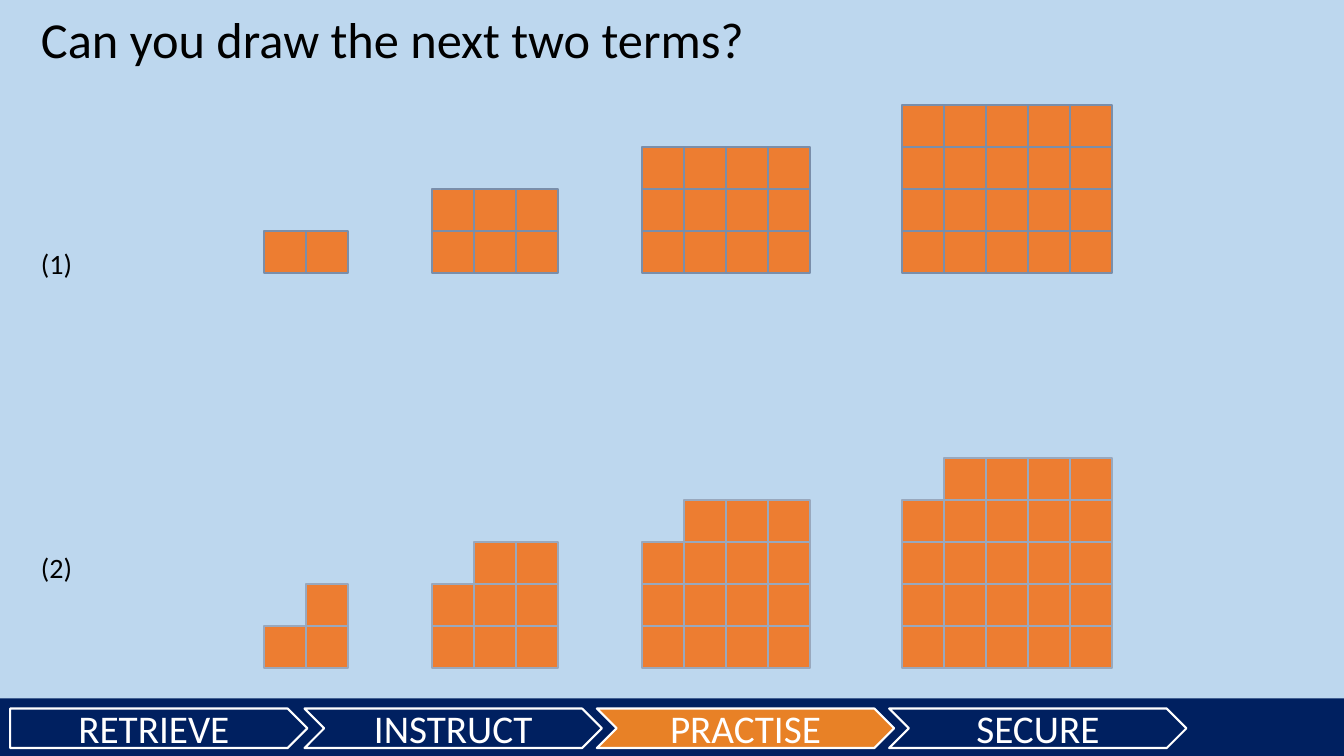
import pptx
import pptx.dml.color
import pptx.enum.shapes
import pptx.enum.text
import pptx.util

COLORS = {
    "background": "BDD7EE",
    "navy": "002060",
    "active": "E88126",
    "tile": "ED7D31",
    "rectangle_edge": "7A8EAA",
    "step_edge": "99A8BD",
    "white": "FFFFFF",
    "black": "000000",
}
FONT = "Calibri"
CELL = pptx.util.Inches(7.5 / 18)  # the slide is 32 columns by 18 rows
COLUMNS, ROWS = 32, 18
TERM_LEFTS = (6.28, 10.28, 15.28, 21.48)
STAGES = (("RETRIEVE", 0.24), ("INSTRUCT", 7.25), ("PRACTISE", 14.21), ("SECURE", 21.17))
CURRENT_STAGE = "PRACTISE"
PRESETS = pptx.enum.shapes.MSO_SHAPE


def rgb(name):
    return pptx.dml.color.RGBColor.from_string(COLORS[name])


def cells(*counts):
    return [round(count * CELL) for count in counts]


def add_run(paragraph, text, size, color):
    run = paragraph.add_run()
    run.text = text
    run.font.name = FONT
    run.font.size = pptx.util.Pt(size)
    run.font.color.rgb = rgb(color)


def add_text(slide, text, box, size):
    frame = slide.shapes.add_textbox(*cells(*box)).text_frame
    frame.word_wrap = True
    paragraph = frame.paragraphs[0]
    add_run(paragraph, text, size, "black")
    return paragraph


def add_block(shapes, preset, box, fill, edge=None):
    shape = shapes.add_shape(preset, *cells(*box))
    shape.shadow.inherit = False
    shape.fill.solid()
    shape.fill.fore_color.rgb = rgb(fill)
    if edge:
        shape.line.color.rgb = rgb(edge)
        shape.line.width = pptx.util.Pt(1.5)
    else:
        shape.line.fill.background()
    return shape


def add_term(slide, left, bottom, heights, edge):
    """Group the tiles of one term, stacked to the given column heights."""
    group = slide.shapes.add_group_shape()
    for column, height in enumerate(heights):
        for level in range(1, height + 1):
            box = (left + column, bottom - level, 1, 1)
            add_block(group.shapes, PRESETS.RECTANGLE, box, "tile", edge)


def add_stage_bar(slide):
    add_block(slide.shapes, PRESETS.RECTANGLE, (0, 16.63, COLUMNS, 1.37), "navy")
    for index, (label, left) in enumerate(STAGES):
        preset = PRESETS.CHEVRON if index else PRESETS.PENTAGON
        fill = "active" if label == CURRENT_STAGE else "navy"
        stage = add_block(slide.shapes, preset, (left, 16.87, 7.08, 0.94), fill, "white")
        stage.text_frame.vertical_anchor = pptx.enum.text.MSO_ANCHOR.MIDDLE
        paragraph = stage.text_frame.paragraphs[0]
        paragraph.alignment = pptx.enum.text.PP_ALIGN.CENTER
        add_run(paragraph, label, 28, "white")


def main():
    presentation = pptx.Presentation()
    presentation.slide_width, presentation.slide_height = cells(COLUMNS, ROWS)
    slide = presentation.slides.add_slide(presentation.slide_layouts[6])
    slide.background.fill.solid()
    slide.background.fill.fore_color.rgb = rgb("background")

    add_stage_bar(slide)
    title = add_text(slide, "Can you draw the next two terms?", (0.74, 0.24, 30.53, 1.97), 36)
    title.line_spacing = 0.9
    add_text(slide, "(1)", (0.74, 5.74, 1.54, 1.06), 20)
    add_text(slide, "(2)", (0.74, 12.98, 1.54, 1.06), 20)

    for term, left in enumerate(TERM_LEFTS, start=1):
        rectangle = [term] * (term + 1)
        step = [term] + [term + 1] * term
        add_term(slide, left, 6.5, rectangle, "rectangle_edge")
        add_term(slide, left, 15.9, step, "step_edge")

    presentation.save("out.pptx")


if __name__ == "__main__":
    main()
